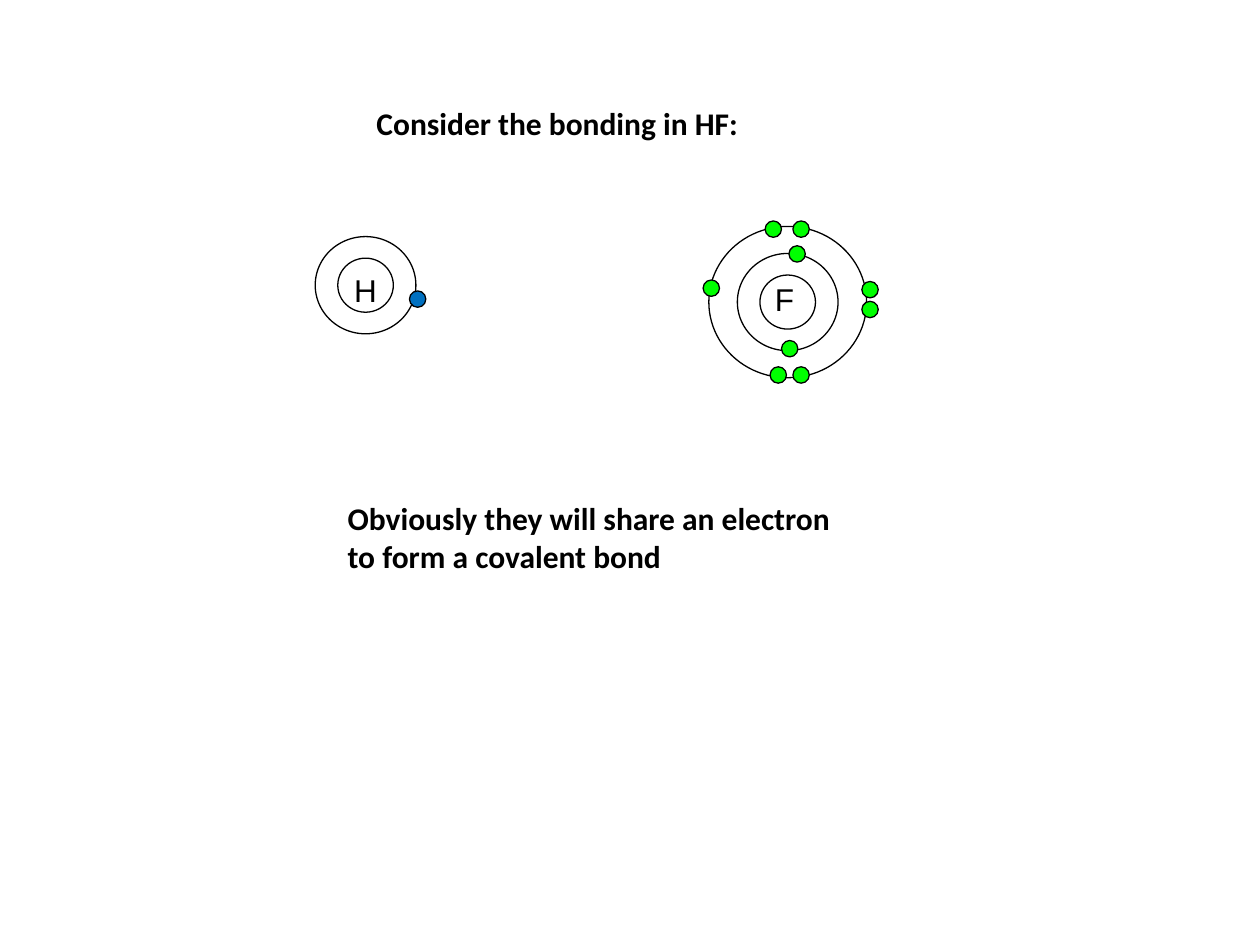
from pptx import Presentation
from pptx.dml.color import RGBColor
from pptx.enum.shapes import MSO_SHAPE
from pptx.enum.text import MSO_AUTO_SIZE
from pptx.util import Cm, Pt

BLACK, GREEN, BLUE = "000000", "00FF00", "0070C0"
SHELLS = [(1.12, 1.09), (2.03, 1.96), (3.18, 3.05)]  # nucleus first
ELECTRON = (0.33, 0.33)

# Electron positions, measured from the centre of the atom
H_ELECTRONS = [(1.05, 0.28)]
F_ELECTRONS = [
    (0.19, -0.97), (0.04, 0.94),    # inner shell
    (-0.29, -1.47), (0.27, -1.47),  # outer shell, top
    (1.66, -0.25), (1.66, 0.15),    # right
    (-0.19, 1.47), (0.27, 1.47),    # bottom
    (-1.54, -0.28),                 # left
]


def color(value):
    return RGBColor.from_string(value)


def add_text(shapes, text, x, y, w, h, font, bold=False):
    s = shapes.add_textbox(Cm(x), Cm(y), Cm(w), Cm(h))
    tf = s.text_frame
    tf.word_wrap = True
    r = tf.paragraphs[0].add_run()
    r.text = text
    r.font.name = font
    r.font.size = Pt(18)
    r.font.bold = bold
    r.font.color.rgb = color(BLACK)
    return tf


def add_caption(shapes, text, x, y, w, h):
    tf = add_text(shapes, text, x, y, w, h, "Calibri", bold=True)
    tf.auto_size = MSO_AUTO_SIZE.SHAPE_TO_FIT_TEXT


def add_label(shapes, symbol, x, y):
    tf = add_text(shapes, symbol, x, y, 1.02, 0.48, "Arial")
    tf.margin_left = tf.margin_right = Cm(0.2)
    tf.margin_top = tf.margin_bottom = Cm(0.1)


def add_ellipse(shapes, cx, cy, size, fill=None):
    w, h = size
    s = shapes.add_shape(MSO_SHAPE.OVAL, Cm(cx - w / 2), Cm(cy - h / 2), Cm(w), Cm(h))
    s.shadow.inherit = False
    s.line.color.rgb = color(BLACK)
    s.line.width = Pt(0.75)
    if fill:
        s.fill.solid()
        s.fill.fore_color.rgb = color(fill)
    else:
        s.fill.background()


def add_atom(slide, symbol, cx, cy, label_offset, rings, electrons, fill):
    shapes = slide.shapes.add_group_shape().shapes
    dx, dy = label_offset
    add_label(shapes, symbol, cx + dx, cy + dy)
    for size in SHELLS[:rings]:
        add_ellipse(shapes, cx, cy, size)
    for dx, dy in electrons:
        add_ellipse(shapes, cx + dx, cy + dy, ELECTRON, fill)


def main():
    prs = Presentation()
    prs.slide_width, prs.slide_height = Cm(25.4), Cm(19.05)
    slide = prs.slides.add_slide(prs.slide_layouts[6])

    # Heading
    add_caption(slide.shapes, "Consider the bonding in HF:", 7.34, 1.98, 9.73, 1.02)

    # Hydrogen and fluorine atoms
    add_atom(slide, "H", 7.37, 5.75, (-0.43, -0.39), 2, H_ELECTRONS, BLUE)
    add_atom(slide, "F", 15.88, 6.09, (-0.46, -0.55), 3, F_ELECTRONS, GREEN)

    # Conclusion
    add_caption(slide.shapes, "Obviously they will share an electron to form a covalent bond",
                6.76, 9.93, 10.72, 1.8)

    prs.save("out.pptx")


if __name__ == "__main__":
    main()
